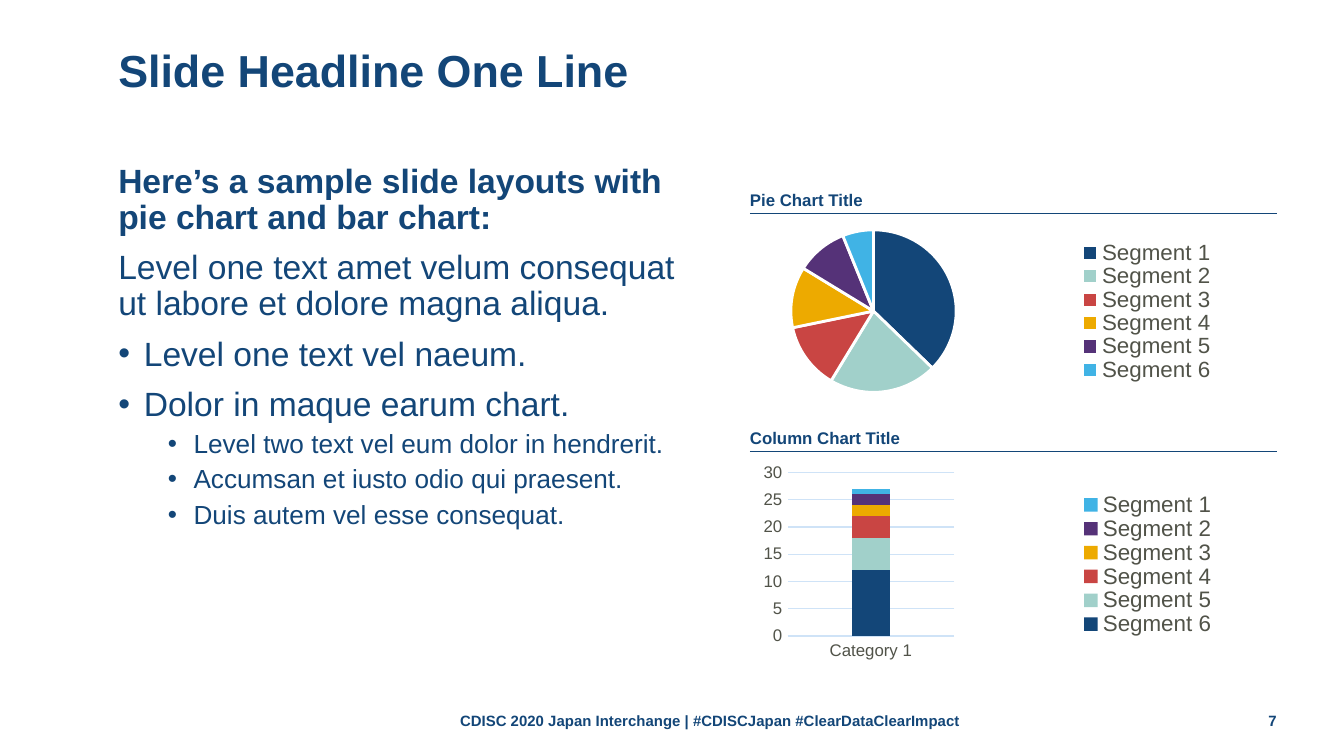
"""Build a slide with a bulleted text column, a pie chart and a stacked column chart."""
from dataclasses import dataclass
from typing import NamedTuple

from lxml.etree import SubElement
from pptx import Presentation
from pptx.chart.chart import Chart
from pptx.chart.data import CategoryChartData
from pptx.dml.color import RGBColor
from pptx.enum.chart import XL_CHART_TYPE, XL_LEGEND_POSITION, XL_TICK_MARK
from pptx.enum.shapes import MSO_CONNECTOR
from pptx.enum.text import MSO_ANCHOR, PP_ALIGN
from pptx.oxml import parse_xml
from pptx.oxml.ns import nsdecls, qn
from pptx.slide import Slide
from pptx.util import Inches, Pt


@dataclass(frozen=True)
class Theme:
    font: str = "Arial"
    navy: str = "134678"
    grey: str = "515349"
    white: str = "FFFFFF"
    grid: str = "CFE3F7"
    segments: tuple[str, ...] = ("134678", "A1D0CA", "C94543", "EDAA00", "553278", "40B3E5")
    headline: float = 24
    body: float = 18
    detail: float = 14
    legend: float = 12
    label: float = 9
    footer: float = 8


class Box(NamedTuple):
    left: float
    top: float
    width: float
    height: float

    def inches(self) -> tuple[Inches, ...]:
        return tuple(Inches(length) for length in self)


class Para(NamedTuple):
    text: str
    size: float
    bold: bool = False
    align: PP_ALIGN = PP_ALIGN.LEFT
    spacing: float = 1.0
    before: float = 0
    level: int = 0
    margin: float = 0
    bullet: bool = False


THEME = Theme()
HANGING = 0.19
RIGHT_EDGE = 9.5
CHART_LEFT = 5.58


def rgb(code: str) -> RGBColor:
    return RGBColor.from_string(code)


def style_font(font, size: float, color: str, bold: bool = False) -> None:
    font.name, font.size, font.bold = THEME.font, Pt(size), bold
    font.color.rgb = rgb(color)


def add_text(shapes, box: Box, paras: list[Para], anchor=MSO_ANCHOR.TOP) -> None:
    frame = shapes.add_textbox(*box.inches()).text_frame
    frame.word_wrap = True
    frame.vertical_anchor = anchor
    frame.margin_left = frame.margin_top = frame.margin_right = frame.margin_bottom = 0
    for number, para in enumerate(paras):
        paragraph = frame.add_paragraph() if number else frame.paragraphs[0]
        paragraph.text = para.text
        paragraph.level = para.level
        paragraph.alignment = para.align
        paragraph.line_spacing = para.spacing
        if number:
            paragraph.space_before = Pt(para.before)
        properties = paragraph._p.get_or_add_pPr()
        properties.set("marL", str(Inches(para.margin)))
        properties.set("indent", str(Inches(-HANGING if para.bullet else 0)))
        if para.bullet:
            SubElement(properties, qn("a:buFont"), typeface=THEME.font)
            SubElement(properties, qn("a:buChar"), char="•")
        style_font(paragraph.font, para.size, THEME.navy, para.bold)


def add_chart_heading(slide: Slide, text: str, top: float) -> None:
    shapes = slide.shapes.add_group_shape().shapes
    add_text(shapes, Box(CHART_LEFT, top, 2.88, 0.47), [Para(text, THEME.label, True)])
    rule_top = Inches(top + 0.18)
    rule = shapes.add_connector(
        MSO_CONNECTOR.STRAIGHT, Inches(CHART_LEFT), rule_top, Inches(RIGHT_EDGE), rule_top)
    rule.line.color.rgb = rgb(THEME.navy)
    rule.line.width = Pt(0.5)
    SubElement(rule._element.spPr, qn("a:effectLst"))


def set_layout(parent, index: int, area: Box, inner: bool = False) -> None:
    for existing in parent.findall(qn("c:layout")):
        parent.remove(existing)
    target = '<c:layoutTarget val="inner"/>' if inner else ""
    sizes = "".join(f'<c:{tag} val="{value}"/>' for tag, value in zip("xywh", area))
    parent.insert(index, parse_xml(
        f'<c:layout {nsdecls("c")}><c:manualLayout>{target}<c:xMode val="edge"/>'
        f'<c:yMode val="edge"/>{sizes}</c:manualLayout></c:layout>'))


def add_chart(slide: Slide, kind: XL_CHART_TYPE, box: Box, categories: list[str],
              series: dict[str, list[int]], plot_area: Box, legend_area: Box) -> Chart:
    chart_data = CategoryChartData()
    chart_data.categories = categories
    for name, values in series.items():
        chart_data.add_series(name, values)
    chart = slide.shapes.add_chart(kind, *box.inches(), chart_data).chart
    chart.has_title = False
    style_font(chart.font, THEME.label, THEME.grey)
    chart.has_legend = True
    chart.legend.position = XL_LEGEND_POSITION.RIGHT
    chart.legend.include_in_layout = False
    style_font(chart.legend.font, THEME.legend, THEME.grey)
    set_layout(chart.legend._element, 1, legend_area)
    set_layout(chart._chartSpace.chart.plotArea, 0, plot_area, inner=True)
    return chart


def add_pie(slide: Slide) -> None:
    values = [37, 21, 13, 12, 10, 6]
    names = [f"Segment {number}" for number in range(1, len(values) + 1)]
    pie = add_chart(slide, XL_CHART_TYPE.PIE, Box(5.39, 1.7, 4.11, 1.23), names,
                    {"Series 1": values}, Box(0.02, 0, 0.5, 1), Box(0.63, 0.07, 0.27, 0.86))
    pie.plots[0].vary_by_categories = True
    for index, color in enumerate(THEME.segments):
        slice_format = pie.plots[0].series[0].points[index].format
        slice_format.fill.solid()
        slice_format.fill.fore_color.rgb = rgb(color)
        slice_format.line.color.rgb = rgb(THEME.white)
        slice_format.line.width = Pt(1.5)


def add_columns(slide: Slide) -> None:
    values = [12, 6, 4, 2, 2, 1]
    stack = {f"Segment {len(values) - index}": [value] for index, value in enumerate(values)}
    columns = add_chart(slide, XL_CHART_TYPE.COLUMN_STACKED, Box(5.5, 3.41, 4, 1.52),
                        ["Category 1"], stack, Box(0.09, 0.07, 0.31, 0.8),
                        Box(0.62, 0.17, 0.28, 0.7))
    plot = columns.plots[0]
    plot.vary_by_categories = False
    plot.gap_width, plot.overlap = 338, 100
    for segment, color in zip(plot.series, THEME.segments):
        segment.format.fill.solid()
        segment.format.fill.fore_color.rgb = rgb(color)
    for axis in (columns.category_axis, columns.value_axis):
        axis.major_tick_mark = axis.minor_tick_mark = XL_TICK_MARK.NONE
        style_font(axis.tick_labels.font, THEME.label, THEME.grey)
    scale = columns.value_axis
    scale.minimum_scale, scale.maximum_scale, scale.major_unit = 0, 30, 5
    scale.has_major_gridlines = True
    scale.format.line.fill.background()
    for line in (columns.category_axis.format.line, scale.major_gridlines.format.line):
        line.color.rgb = rgb(THEME.grid)
        line.width = Pt(0.75)


def intro(text: str, bold: bool = False) -> Para:
    return Para(text, THEME.body, bold, spacing=0.9, before=7.5)


def point(text: str) -> Para:
    return Para(text, THEME.body, spacing=0.9, before=7.5, margin=HANGING, bullet=True)


def subpoint(text: str) -> Para:
    return Para(text, THEME.detail, spacing=0.9, before=3.8, level=1, margin=0.56, bullet=True)


def main() -> None:
    deck = Presentation()
    deck.slide_width = Inches(10)
    deck.slide_height = deck.slide_width * 9 // 16
    slide = deck.slides.add_slide(deck.slide_layouts[6])
    add_text(slide.shapes, Box(0.88, 0, 8.62, 1.09),
             [Para("Slide Headline One Line", THEME.headline, True, spacing=0.9)],
             MSO_ANCHOR.MIDDLE)
    add_text(slide.shapes, Box(0.88, 1.22, 4.18, 3.85), [
        intro("Here’s a sample slide layouts with pie chart and bar chart:", True),
        intro("Level one text amet velum consequat ut labore et dolore magna aliqua."),
        point("Level one text vel naeum."),
        point("Dolor in maque earum chart."),
        subpoint("Level two text vel eum dolor in hendrerit."),
        subpoint("Accumsan et iusto odio qui praesent."),
        subpoint("Duis autem vel esse consequat."),
    ])
    add_pie(slide)
    add_chart_heading(slide, "Pie Chart Title", 1.41)
    add_chart_heading(slide, "Column Chart Title", 3.18)
    add_columns(slide)
    event = "CDISC 2020 Japan Interchange | #CDISCJapan #ClearDataClearImpact"
    for text, left, width, align in ((event, 2.73, 5.11, PP_ALIGN.CENTER),
                                     ("7", 9.17, 0.33, PP_ALIGN.RIGHT)):
        add_text(slide.shapes, Box(left, 5.21, width, 0.3),
                 [Para(text, THEME.footer, True, align)], MSO_ANCHOR.MIDDLE)
    deck.save("out.pptx")


if __name__ == "__main__":
    main()
